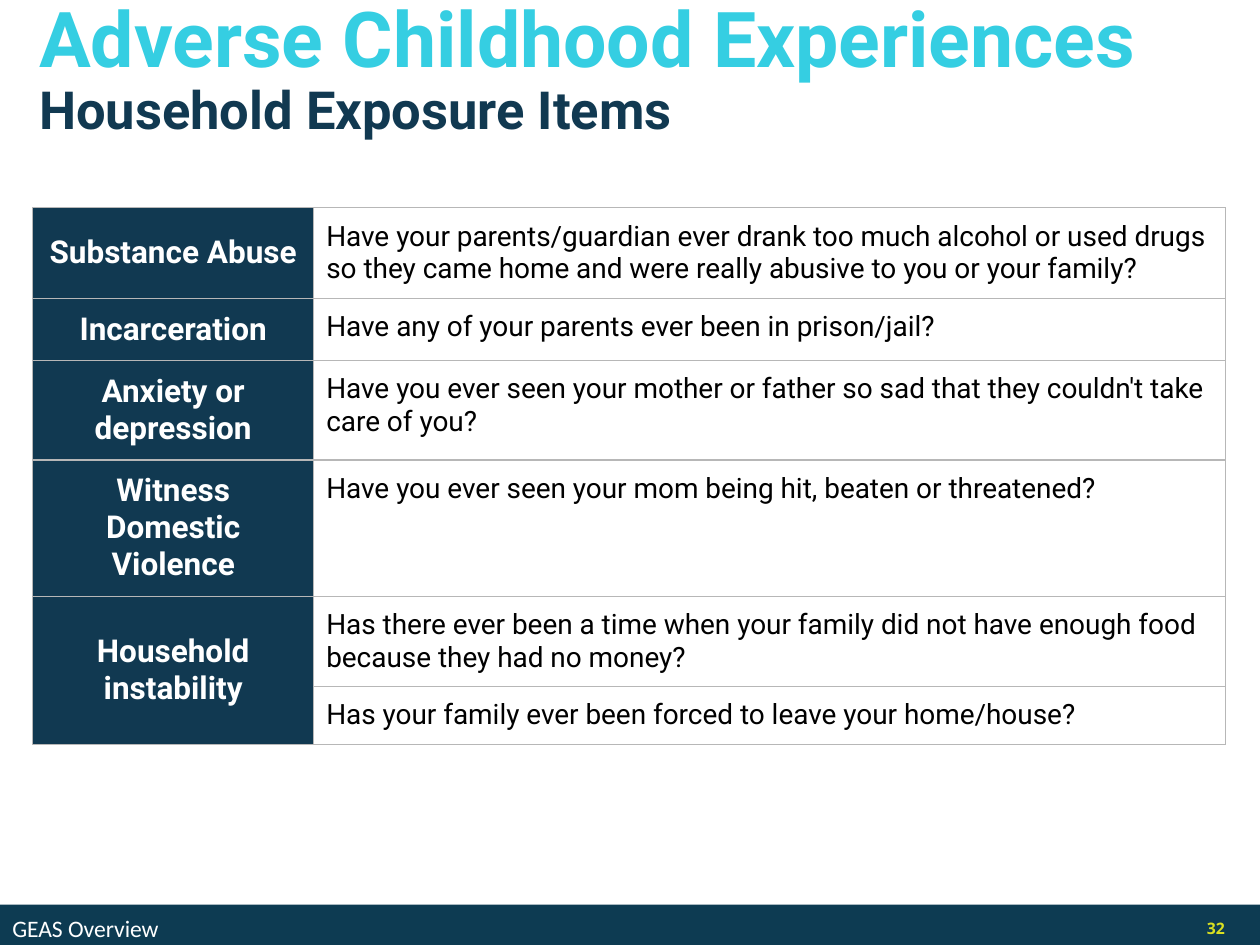
"""Build the slide listing the household exposure items of adverse childhood experiences."""
from dataclasses import dataclass

from lxml.etree import SubElement
from pptx import Presentation
from pptx.dml.color import RGBColor
from pptx.enum.shapes import MSO_SHAPE as Shape
from pptx.enum.text import MSO_ANCHOR as Anchor, MSO_AUTO_SIZE as AutoSize, PP_ALIGN as Align
from pptx.oxml.ns import qn
from pptx.util import Inches, Pt


@dataclass(frozen=True)
class Theme:
    cyan: str = "35CEE2"
    navy: str = "113951"
    footer: str = "0D3B52"
    lime: str = "D9E021"
    white: str = "FFFFFF"
    black: str = "000000"
    border: str = "B7B7B7"
    title_size: float = 44
    subtitle_size: float = 30
    label_size: float = 18
    question_size: float = 16
    footer_size: float = 13.5
    number_size: float = 9
    font: str = "Roboto"


theme = Theme()


def write(para, text, size, color, bold=False, font=theme.font, align=Align.LEFT, spacing=1.0):
    para.text = text
    para.alignment = align
    para.line_spacing = spacing
    para.space_before = Pt(0)
    for span in para.runs:
        span.font.name = font
        span.font.size = Pt(size)
        span.font.bold = bold
        span.font.color.rgb = RGBColor.from_string(color)


def format_cell(cell, fill, anchor):
    cell.fill.solid()
    cell.fill.fore_color.rgb = RGBColor.from_string(fill)
    cell.vertical_anchor = anchor
    cell.margin_left = cell.margin_right = Inches(0.1)
    cell.margin_top = cell.margin_bottom = Inches(0.1)
    properties = cell._tc.get_or_add_tcPr()
    for position, side in enumerate(("a:lnL", "a:lnR", "a:lnT", "a:lnB")):
        line = SubElement(properties, qn(side), w=str(Pt(0.75)))
        SubElement(SubElement(line, qn("a:solidFill")), qn("a:srgbClr"), val=theme.border)
        properties.insert(position, line)


deck = Presentation()
deck.slide_width = Inches(10)
deck.slide_height = Inches(7.5)
page = deck.slides.add_slide(deck.slide_layouts[5])

title = page.shapes.title
title.left, title.top = Inches(0.21), Inches(-0.04)
title.width, title.height = Inches(10), Inches(1.47)
frame = title.text_frame
frame.auto_size = AutoSize.NONE
frame.vertical_anchor = Anchor.TOP
write(frame.paragraphs[0], "Adverse Childhood Experiences", theme.title_size, theme.cyan,
      bold=True, spacing=0.9)
write(frame.add_paragraph(), "Household Exposure Items", theme.subtitle_size, theme.navy,
      bold=True, spacing=0.9)

items = [
    ("Substance Abuse", "Have your parents/guardian ever drank too much alcohol or used drugs "
     "so they came home and were really abusive to you or your family?", 0.71),
    ("Incarceration", "Have any of your parents ever been in prison/jail?", 0.49),
    ("Anxiety or depression", "Have you ever seen your mother or father so sad that they "
     "couldn't take care of you?", 0.79),
    ("Witness\vDomestic Violence",
     "Have you ever seen your mom being hit, beaten or threatened?", 1.08),
    ("Household instability", "Has there ever been a time when your family did not have "
     "enough food because they had no money?", 0.71),
    ("", "Has your family ever been forced to leave your home/house?", 0.46),
]
table_height = sum(height for label, question, height in items)
table = page.shapes.add_table(len(items), 2, Inches(0.26), Inches(1.65),
                              Inches(9.47), Inches(table_height)).table
table.first_row = table.horz_banding = False
table.columns[0].width, table.columns[1].width = Inches(2.23), Inches(7.24)
for row, (label, question, height) in enumerate(items):
    table.rows[row].height = Inches(height)
    label_cell, question_cell = table.cell(row, 0), table.cell(row, 1)
    format_cell(label_cell, theme.navy, Anchor.MIDDLE)
    format_cell(question_cell, theme.white, Anchor.TOP)
    if label:
        write(label_cell.text_frame.paragraphs[0], label, theme.label_size, theme.white,
              bold=True, align=Align.CENTER)
    write(question_cell.text_frame.paragraphs[0], question, theme.question_size, theme.black)
table.cell(4, 0).merge(table.cell(5, 0))

footer = page.shapes.add_shape(Shape.RECTANGLE, Inches(0), Inches(7.18), Inches(10), Inches(0.37))
footer.shadow.inherit = False
footer.fill.solid()
footer.fill.fore_color.rgb = RGBColor.from_string(theme.footer)
footer.line.fill.background()
footer.text_frame.vertical_anchor = Anchor.MIDDLE
write(footer.text_frame.paragraphs[0], "GEAS Overview", theme.footer_size, theme.white,
      font="Calibri")

number = page.shapes.add_textbox(Inches(9.16), Inches(7.22), Inches(0.66), Inches(0.3))
number.text_frame.word_wrap = True
number.text_frame.vertical_anchor = Anchor.MIDDLE
write(number.text_frame.paragraphs[0], "32", theme.number_size, theme.lime,
      bold=True, font="Open Sans", align=Align.RIGHT)

deck.save("out.pptx")
